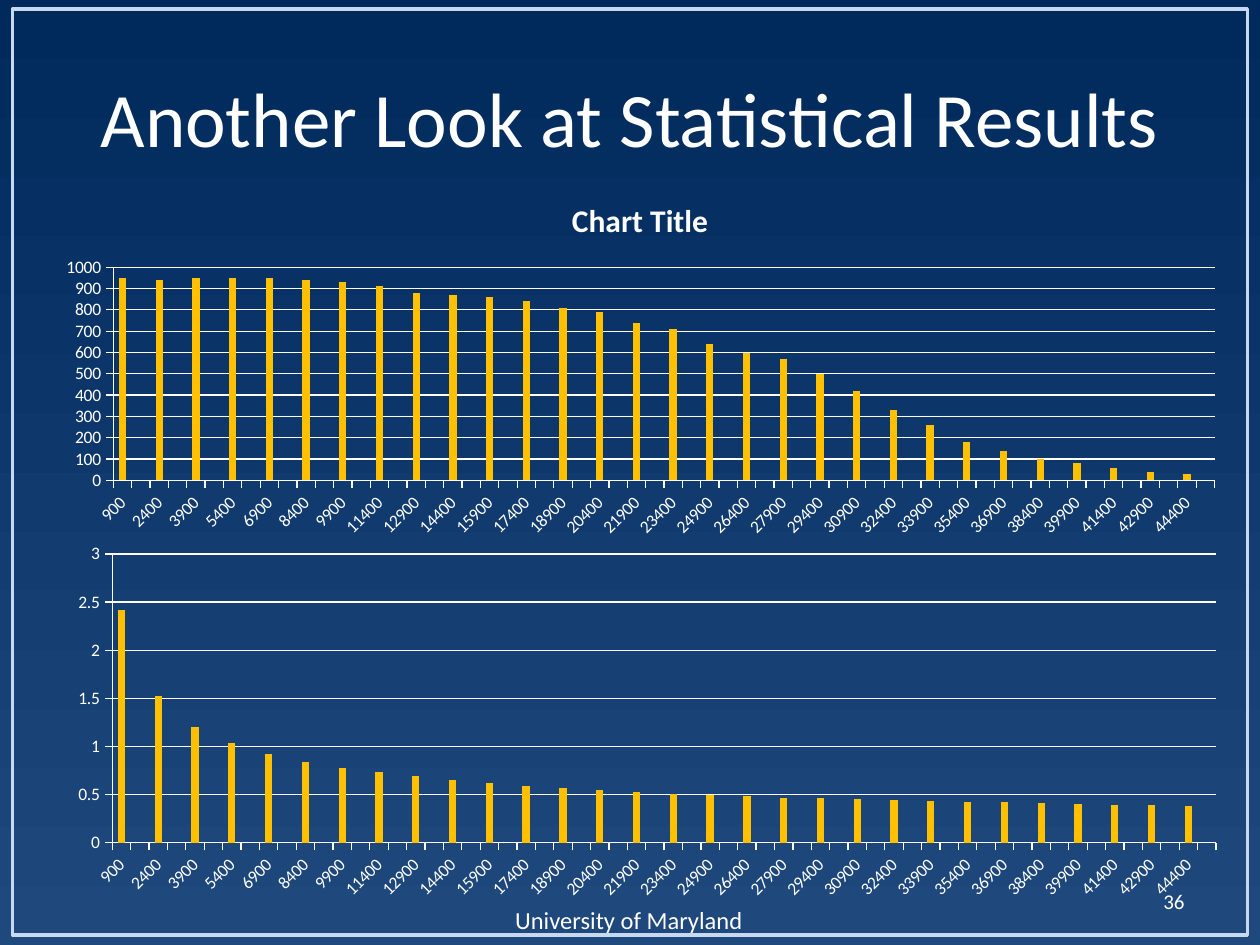
from lxml import etree
from pptx import Presentation
from pptx.chart.data import CategoryChartData
from pptx.dml.color import RGBColor
from pptx.enum.chart import XL_CHART_TYPE, XL_TICK_MARK
from pptx.enum.shapes import MSO_SHAPE
from pptx.enum.text import MSO_ANCHOR, PP_ALIGN
from pptx.oxml import parse_xml
from pptx.util import Inches, Pt

FONT = "Calibri"
WHITE, GOLD, PALE_BLUE = "FFFFFF", "FFC000", "C6D9F1"
BACKGROUND = ("1F497D", "00295C")  # bottom, top

TITLE = "Another Look at Statistical Results"
SIZES = range(900, 44401, 1500)

# Each chart holds one value per size; plot is x, y, width, height as fractions
CHARTS = [
    {
        "box": (0.42, 4.25, 9.42, 2.94),
        "plot": (0.05, 0.05, 0.93, 0.78),
        "title": None, "maximum": 3, "step": 0.5,
        "values": [2.42, 1.52, 1.2, 1.04, 0.92, 0.84, 0.78, 0.73, 0.69, 0.65,
                   0.62, 0.59, 0.57, 0.55, 0.53, 0.51, 0.5, 0.49, 0.47, 0.46,
                   0.45, 0.44, 0.43, 0.42, 0.42, 0.41, 0.4, 0.39, 0.39, 0.38],
    },
    {
        "box": (0.33, 1.42, 9.5, 2.92),
        "plot": (0.06, 0.24, 0.92, 0.58),
        "title": "Chart Title", "maximum": 1000, "step": 100,
        "values": [950, 940, 950, 950, 950, 940, 930, 910, 880, 870,
                   860, 840, 810, 790, 740, 710, 640, 600, 570, 500,
                   420, 330, 260, 180, 140, 100, 80, 60, 40, 30],
    },
]

CHART_NS = "http://schemas.openxmlformats.org/drawingml/2006/chart"


def color(hex_value):
    return RGBColor.from_string(hex_value)


def format_font(font, size, bold=False):
    for name, value in {"name": FONT, "size": Pt(size), "bold": bold}.items():
        setattr(font, name, value)
    font.color.rgb = color(WHITE)


def write_text(shape, text, size, alignment, wrap=True):
    frame = shape.text_frame
    frame.word_wrap = wrap
    frame.vertical_anchor = MSO_ANCHOR.MIDDLE
    paragraph = frame.paragraphs[0]
    paragraph.text = text
    paragraph.alignment = alignment
    format_font(paragraph.runs[0].font, size)


def place_plot(chart, plot):
    """Fix the inner plot area at fractions of the chart space."""
    plot_area = chart.plots[0]._element.getparent()
    for old in plot_area.findall(f"{{{CHART_NS}}}layout"):
        plot_area.remove(old)
    layout = parse_xml(f'<c:layout xmlns:c="{CHART_NS}"><c:manualLayout/></c:layout>')
    settings = [("layoutTarget", "inner"), ("xMode", "edge"), ("yMode", "edge")]
    settings += zip("xywh", plot)
    for name, value in settings:
        etree.SubElement(layout[0], f"{{{CHART_NS}}}{name}").set("val", str(value))
    plot_area.insert(0, layout)


def add_column_chart(slide, box, plot, title, maximum, step, values):
    data = CategoryChartData()
    # A blank category follows every size
    data.categories = [label for size in SIZES for label in (str(size), "")]
    data.add_series("Series 1", [item for value in values for item in (value, None)])
    chart = slide.shapes.add_chart(
        XL_CHART_TYPE.COLUMN_CLUSTERED, *map(Inches, box), data).chart
    format_font(chart.font, 10)
    chart.has_legend = False
    chart.has_title = title is not None
    if title:
        chart.chart_title.text_frame.text = title
        run = chart.chart_title.text_frame.paragraphs[0].runs[0]
        format_font(run.font, 18, bold=True)

    columns = chart.plots[0]
    columns.gap_width = 150
    columns.vary_by_categories = False
    fill = columns.series[0].format.fill
    fill.solid()
    fill.fore_color.rgb = color(GOLD)

    value_axis = chart.value_axis
    value_axis.minimum_scale = 0
    value_axis.maximum_scale = maximum
    value_axis.major_unit = step
    value_axis.has_major_gridlines = True
    for axis in (chart.category_axis, value_axis):
        axis.major_tick_mark = XL_TICK_MARK.OUTSIDE
        format_font(axis.tick_labels.font, 10)
    for line in (chart.category_axis.format.line, value_axis.format.line,
                 value_axis.major_gridlines.format.line):
        line.color.rgb = color(WHITE)
        line.width = Pt(0.75)
    label_text = chart.category_axis._element.find(f"{{{CHART_NS}}}txPr")
    label_text[0].set("rot", str(-45 * 60000))
    place_plot(chart, plot)


def main():
    presentation = Presentation()
    presentation.slide_width = Inches(10)
    presentation.slide_height = Inches(7.5)
    slide = presentation.slides.add_slide(presentation.slide_layouts[5])

    fill = slide.background.fill
    fill.gradient()
    fill.gradient_angle = 90
    for stop, hex_value in zip(fill.gradient_stops, BACKGROUND):
        stop.color.rgb = color(hex_value)

    border = slide.shapes.add_shape(
        MSO_SHAPE.RECTANGLE, *map(Inches, (0.1, 0.07, 9.8, 7.35)))
    border.shadow.inherit = False
    border.fill.background()
    border.line.color.rgb = color(PALE_BLUE)
    border.line.width = Pt(2)

    title = slide.shapes.title
    title.left, title.top, title.width, title.height = map(Inches, (0.5, 0.3, 9, 1.25))
    write_text(title, TITLE, 44, PP_ALIGN.CENTER)

    footer = slide.shapes.add_textbox(*map(Inches, (3.99, 7.13, 2.03, 0.34)))
    write_text(footer, "University of Maryland", 14, PP_ALIGN.LEFT, wrap=False)
    number = slide.shapes.add_textbox(*map(Inches, (7.17, 6.95, 2.33, 0.4)))
    write_text(number, "36", 12, PP_ALIGN.RIGHT)

    for chart in CHARTS:
        add_column_chart(slide, **chart)

    presentation.save("out.pptx")


if __name__ == "__main__":
    main()
